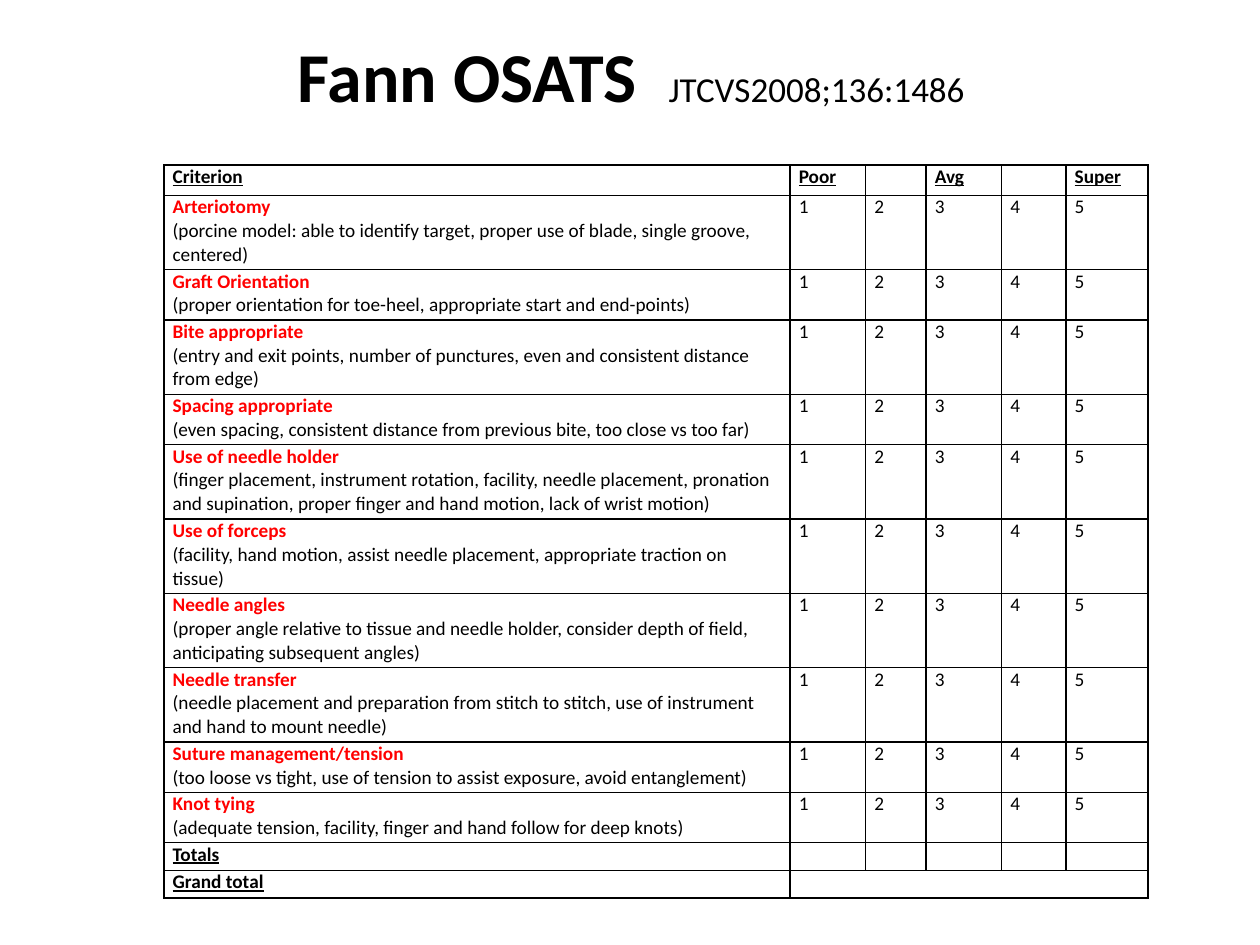
import pptx
import pptx.util
import pptx.dml.color
import pptx.enum.text
import pptx.oxml.ns
import lxml.etree

Inches = pptx.util.Inches
Pt = pptx.util.Pt
qn = pptx.oxml.ns.qn

HUES = {"ink": "000000", "name": "FF0000", "back": "FFFFFF"}
FACE = "Calibri"
SIZE = 11
HEAD = {"bold": True, "underline": True}
NAME = {"bold": True, "hue": "name"}
PAD = {"margin_left": Inches(0.07), "margin_right": Inches(0.07),
       "margin_top": 0, "margin_bottom": 0}

COLS = [4.97, 0.6, 0.48, 0.6, 0.51, 0.65]
HIGH = {"head": 0.24, "two": 0.4, "three": 0.59, "sum": 0.22}
TOP = ["Criterion", "Poor", "", "Avg", "", "Super"]
MARKS = ["1", "2", "3", "4", "5"]
ITEMS = [
    ("Arteriotomy", "(porcine model: able to identify target, proper use of blade, "
     "single groove, centered)", "three"),
    ("Graft Orientation", "(proper orientation for toe-heel, appropriate start "
     "and end-points)", "two"),
    ("Bite appropriate", "(entry and exit points, number of punctures, even and "
     "consistent distance from edge)", "three"),
    ("Spacing appropriate", "(even spacing, consistent distance from previous bite, "
     "too close vs too far)", "two"),
    ("Use of needle holder", "(finger placement, instrument rotation, facility, needle "
     "placement, pronation and supination, proper finger and hand motion, lack of "
     "wrist motion)", "three"),
    ("Use of forceps", "(facility, hand motion, assist needle placement, appropriate "
     "traction on tissue)", "three"),
    ("Needle angles", "(proper angle relative to tissue and needle holder, consider "
     "depth of field, anticipating subsequent angles)", "three"),
    ("Needle transfer", "(needle placement and preparation from stitch to stitch, use "
     "of instrument and hand to mount needle)", "three"),
    ("Suture management/tension", "(too loose vs tight, use of tension to assist "
     "exposure, avoid entanglement)", "two"),
    ("Knot tying", "(adequate tension, facility, finger and hand follow for deep "
     "knots)", "two"),
]
SUMS = ["Totals", "Grand total"]


def style(obj, look):
    for key, val in look.items():
        setattr(obj, key, val)


def add_run(para, text, size=SIZE, hue="ink", **look):
    run = para.add_run()
    run.text = text
    style(run.font, {"name": FACE, "size": Pt(size), "bold": False, **look})
    run.font.color.rgb = pptx.dml.color.RGBColor.from_string(HUES[hue])


def add_edges(cell):
    props = cell._tc.get_or_add_tcPr()
    for side in ("lnL", "lnR", "lnT", "lnB"):
        line = lxml.etree.SubElement(props, qn("a:" + side), w=str(Pt(1)))
        fill = lxml.etree.SubElement(line, qn("a:solidFill"))
        lxml.etree.SubElement(fill, qn("a:srgbClr"), val=HUES["ink"])


def fill_cell(cell, lines):
    """Write (text, look) lines, one paragraph each."""
    style(cell, PAD)
    frame = cell.text_frame
    for num, (text, look) in enumerate(lines):
        para = frame.add_paragraph() if num else frame.paragraphs[0]
        if text:
            add_run(para, text, **look)
        else:
            # Keep an empty cell as low as its row
            lxml.etree.SubElement(para._p, qn("a:endParaRPr"), sz=str(SIZE * 100))


def add_title(slide):
    box = slide.shapes.add_textbox(Inches(2.24), Inches(0.21), Inches(5.54), Inches(0.77))
    frame = box.text_frame
    style(frame, {"word_wrap": False,
                  "auto_size": pptx.enum.text.MSO_AUTO_SIZE.SHAPE_TO_FIT_TEXT})
    para = frame.paragraphs[0]
    para.alignment = pptx.enum.text.PP_ALIGN.CENTER
    add_run(para, "Fann OSATS  ", 40, bold=True)
    add_run(para, "JTCVS2008;136:1486", 20)


def add_grid(slide):
    # Each row is a height and one list of lines per cell
    rows = [(HIGH["head"], [[(text, HEAD)] for text in TOP])]
    for name, note, kind in ITEMS:
        cells = [[(name, NAME), (note, {})]] + [[(mark, {})] for mark in MARKS]
        rows.append((HIGH[kind], cells))
    for text in SUMS:
        rows.append((HIGH["sum"], [[(text, HEAD)]] + [[("", {})]] * len(MARKS)))

    tall = sum(high for high, cells in rows)
    grid = slide.shapes.add_table(len(rows), len(COLS), Inches(1.3), Inches(1.31),
                                  Inches(sum(COLS)), Inches(tall)).table
    style(grid, {"first_row": False, "horz_banding": False})
    for col, wide in zip(grid.columns, COLS):
        col.width = Inches(wide)
    for row, (high, cells) in zip(grid.rows, rows):
        row.height = Inches(high)
        for cell, lines in zip(row.cells, cells):
            fill_cell(cell, lines)
            add_edges(cell)
            cell.fill.solid()
            cell.fill.fore_color.rgb = pptx.dml.color.RGBColor.from_string(HUES["back"])

    # Grand total spans all the marks
    last = len(rows) - 1
    grid.cell(last, 1).merge(grid.cell(last, len(COLS) - 1))


def main():
    deck = pptx.Presentation()
    style(deck, {"slide_width": Inches(10), "slide_height": Inches(7.5)})
    slide = deck.slides.add_slide(deck.slide_layouts[6])
    add_grid(slide)
    add_title(slide)
    deck.save("out.pptx")


if __name__ == "__main__":
    main()
